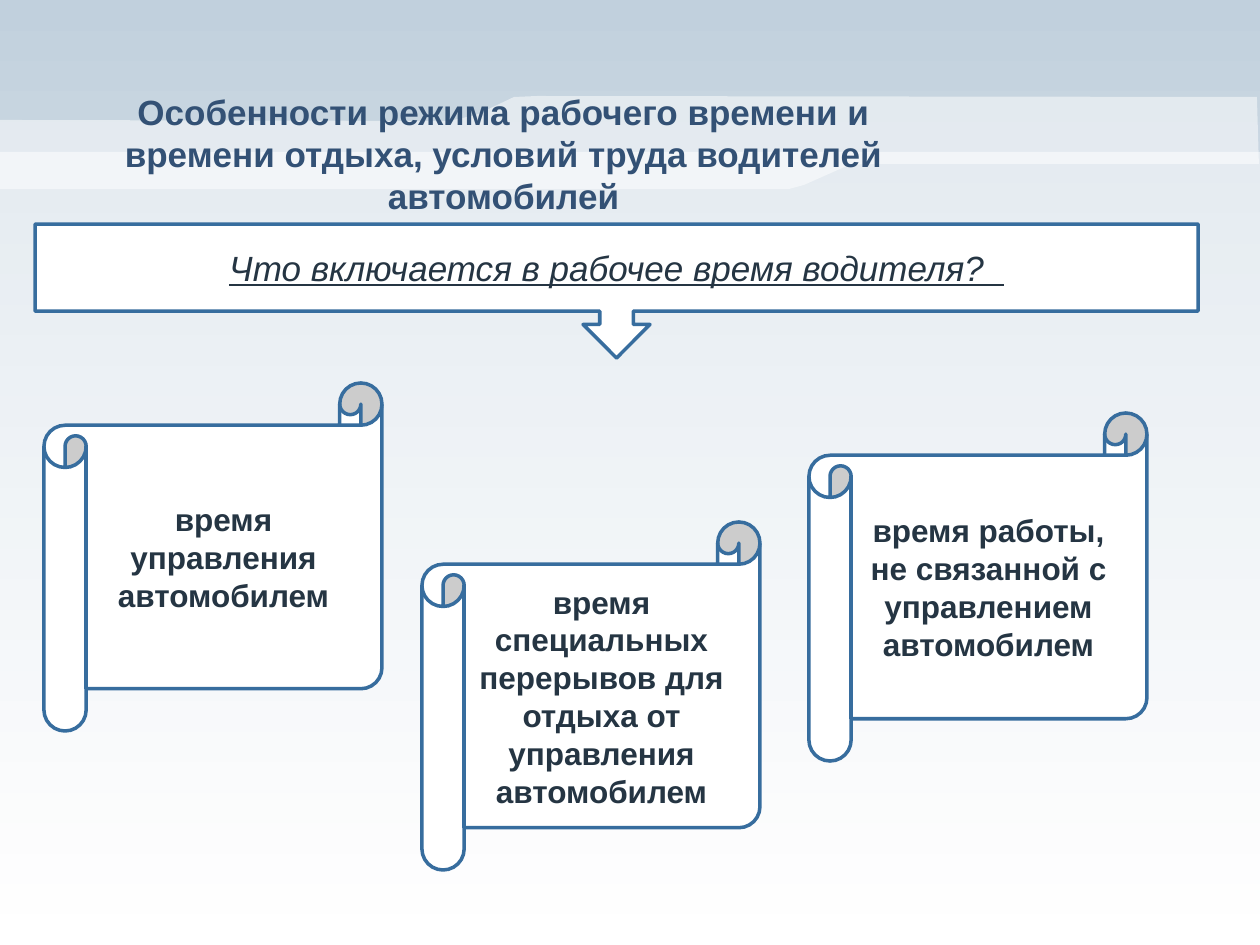
import pptx
import pptx.util
import pptx.dml.color
import pptx.enum.shapes
import pptx.enum.text
import lxml.etree

PX = 914400 / 126
SHAPE = pptx.enum.shapes.MSO_SHAPE
FONT = "Arial"
INK, BLUE, TITLE_BLUE, WHITE = "253543", "376D9E", "335175", "FFFFFF"

TITLE = "Особенности режима рабочего времени и времени отдыха, условий труда водителей автомобилей"
QUESTION = "Что включается в рабочее время водителя?  "
SCROLL_SIZE = (338, 348)
SCROLLS = [
    ((44, 383), "время управления автомобилем"),
    ((422, 522), "время специальных перерывов для отдыха от управления автомобилем"),
    ((809, 413), "время работы, не связанной с управлением автомобилем"),
]
VEILS = [
    [(0, 152), (1260, 152), (1260, 945), (0, 945)],
    [(0, 120), (449, 121), (476, 115), (514, 97), (537, 96), (1257, 97), (1259, 164),
     (872, 164), (849, 165), (804, 185), (789, 189), (0, 189)],
]


def emu(pixels):
    return round(pixels * PX)


def color(value):
    return pptx.dml.color.RGBColor.from_string(value)


def write(shape, text, size, ink, **style):
    frame = shape.text_frame
    frame.word_wrap = True
    frame.auto_size = pptx.enum.text.MSO_AUTO_SIZE.NONE
    frame.vertical_anchor = pptx.enum.text.MSO_ANCHOR.MIDDLE
    para = frame.paragraphs[0]
    para.alignment = pptx.enum.text.PP_ALIGN.CENTER
    span = para.add_run()
    span.text = text
    font = span.font
    font.name, font.size = FONT, pptx.util.Pt(size)
    font.color.rgb = color(ink)
    for name, value in style.items():
        setattr(font, name, value)


def add_veil(page, points):
    builder = page.shapes.build_freeform(*points[0], scale=PX)
    builder.add_line_segments(points[1:], close=True)
    veil = builder.convert_to_shape()
    veil.shadow.inherit = False
    veil.line.fill.background()
    veil.fill.solid()
    veil.fill.fore_color.rgb = color(WHITE)
    tint = veil.element.spPr.find(".//" + pptx.oxml.ns.qn("a:srgbClr"))
    lxml.etree.SubElement(tint, pptx.oxml.ns.qn("a:alpha"), val="50000")


def add_panel(page, kind, place):
    panel = page.shapes.add_shape(kind, *map(emu, place))
    panel.shadow.inherit = False
    panel.fill.solid()
    panel.fill.fore_color.rgb = color(WHITE)
    panel.line.color.rgb = color(BLUE)
    panel.line.width = pptx.util.Pt(2)
    return panel


def main():
    deck = pptx.Presentation()
    deck.slide_width, deck.slide_height = emu(1260), emu(945)
    page = deck.slides.add_slide(deck.slide_layouts[5])

    backdrop = page.background.fill
    backdrop.gradient()
    backdrop.gradient_angle = 270
    for stop, (position, value) in zip(backdrop.gradient_stops, [(0, "C1D0DD"), (1, WHITE)]):
        stop.position = position
        stop.color.rgb = color(value)

    for points in VEILS:
        add_veil(page, points)

    title = page.shapes.title
    page.shapes.element.append(title.element)
    title.left, title.top, title.width, title.height = map(emu, (50, 107, 907, 93))
    write(title, TITLE, 20, TITLE_BLUE, bold=True)

    callout = add_panel(page, SHAPE.DOWN_ARROW_CALLOUT, (35, 224, 1163, 134))
    write(callout, QUESTION, 20, INK, italic=True, underline=True)

    for corner, text in SCROLLS:
        scroll = add_panel(page, SHAPE.HORIZONTAL_SCROLL, corner + SCROLL_SIZE)
        write(scroll, text, 18, INK, bold=True)

    deck.save("out.pptx")


if __name__ == "__main__":
    main()
